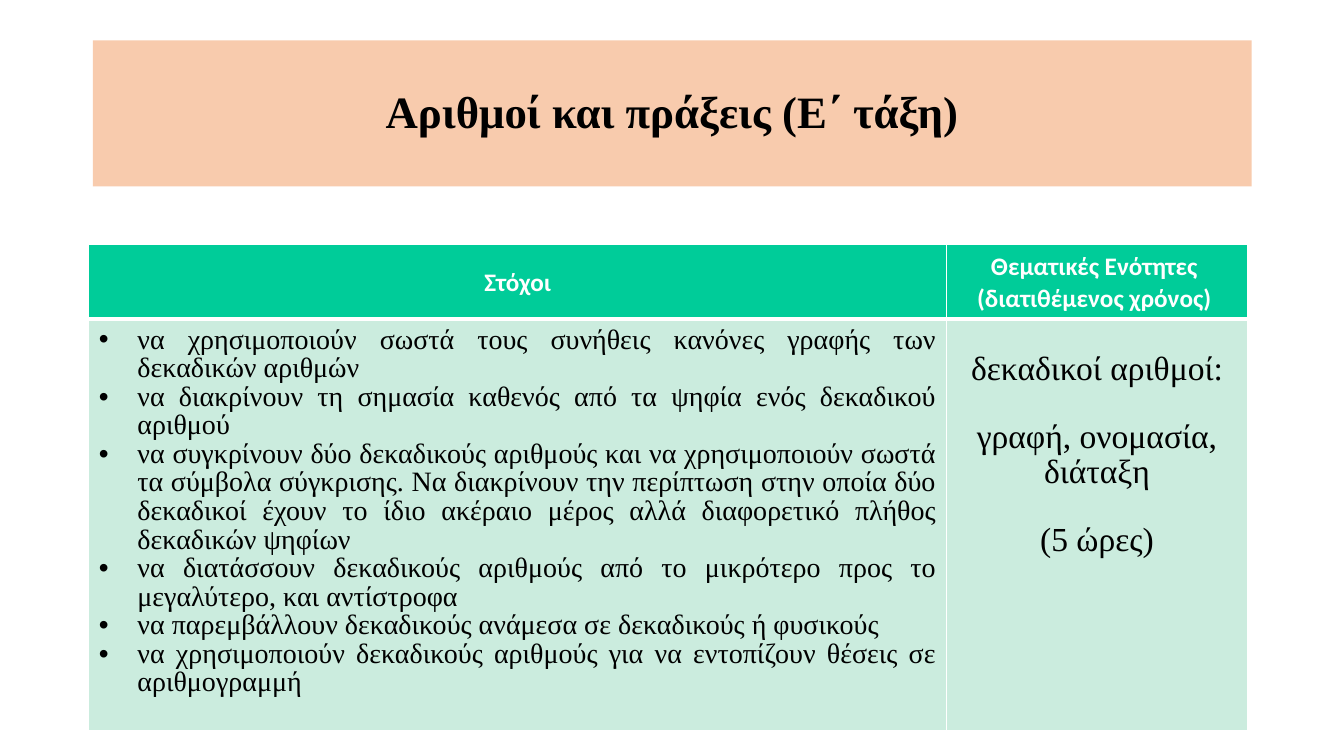
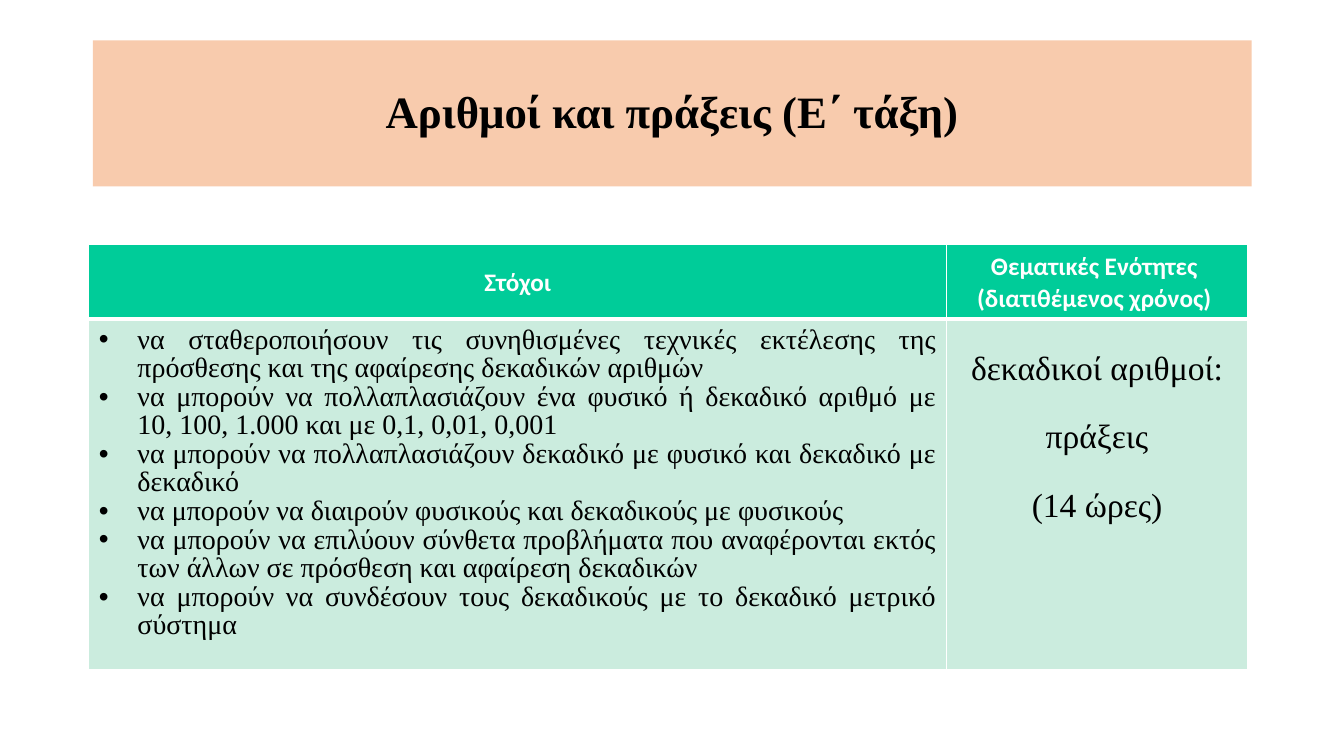
from lxml import etree
from pptx import Presentation
from pptx.dml.color import RGBColor
from pptx.enum.text import MSO_ANCHOR, MSO_AUTO_SIZE, PP_ALIGN
from pptx.oxml import ns
from pptx.util import Cm, Pt

PEACH = RGBColor(0xF8, 0xCB, 0xAD)
GREEN = RGBColor(0x00, 0xCC, 0x99)
MINT = RGBColor(0xCB, 0xEC, 0xDE)
BLACK = RGBColor(0, 0, 0)
WHITE = RGBColor(255, 255, 255)
SERIF, SANS = "Times New Roman", "Calibri"

TITLE = "Αριθμοί και πράξεις (Ε΄ τάξη)"
HEADS = [["Στόχοι"], ["Θεματικές Ενότητες ", "(διατιθέμενος χρόνος) "]]
COLS = [Cm(21.62), Cm(7.59)]
HEAD_H = Cm(1.87)
THIN, THICK = Pt(0.91), Pt(2.95)
INDENT = Cm(0.97)
GAP = Pt(24.4)

# Each unit: height of the body row, goals, groups of topic lines
UNITS = [
    (Cm(10.38), [
        "να χρησιμοποιούν σωστά τους συνήθεις κανόνες γραφής των δεκαδικών αριθμών",
        "να διακρίνουν τη σημασία καθενός από τα ψηφία ενός δεκαδικού αριθμού",
        "να συγκρίνουν δύο δεκαδικούς αριθμούς και να χρησιμοποιούν σωστά τα σύμβολα "
        "σύγκρισης. Να διακρίνουν την περίπτωση στην οποία δύο δεκαδικοί έχουν το ίδιο "
        "ακέραιο μέρος αλλά διαφορετικό πλήθος δεκαδικών ψηφίων ",
        "να διατάσσουν δεκαδικούς αριθμούς από το μικρότερο προς το μεγαλύτερο, "
        "και αντίστροφα ",
        "να παρεμβάλλουν δεκαδικούς ανάμεσα σε δεκαδικούς ή φυσικούς ",
        "να χρησιμοποιούν δεκαδικούς αριθμούς για να εντοπίζουν θέσεις σε αριθμογραμμή",
    ], [["δεκαδικοί αριθμοί:"], ["γραφή, ονομασία,", "διάταξη"], ["(5 ώρες)"]]),
    (Cm(8.82), [
        "να σταθεροποιήσουν τις συνηθισμένες τεχνικές εκτέλεσης της πρόσθεσης και της "
        "αφαίρεσης δεκαδικών αριθμών",
        "να μπορούν να πολλαπλασιάζουν ένα φυσικό ή δεκαδικό αριθμό με 10, 100, 1.000 "
        "και με 0,1, 0,01, 0,001",
        "να μπορούν να πολλαπλασιάζουν δεκαδικό με φυσικό και δεκαδικό με δεκαδικό",
        "να μπορούν να διαιρούν φυσικούς και δεκαδικούς με φυσικούς",
        "να μπορούν να επιλύουν σύνθετα προβλήματα που αναφέρονται εκτός των άλλων σε "
        "πρόσθεση και αφαίρεση δεκαδικών",
        "να μπορούν να συνδέσουν τους δεκαδικούς με το δεκαδικό μετρικό σύστημα",
    ], [["δεκαδικοί αριθμοί:"], ["πράξεις"], ["(14 ώρες)"]]),
]


def style(para, size, face, color, bold, align, spacing):
    para.alignment = align
    para.line_spacing = spacing
    for run in para.runs:
        font = run.font
        font.size, font.name, font.bold = Pt(size), face, bold
        font.color.rgb = color


def write(frame, lines, *look):
    """Fill the frame with one paragraph a line, all of one look."""
    for i, line in enumerate(lines):
        para = frame.add_paragraph() if i else frame.paragraphs[0]
        para.text = line
        style(para, *look)


def add_bullet(para):
    props = para._p.get_or_add_pPr()
    props.set("marL", str(INDENT))
    props.set("indent", str(-INDENT))
    etree.SubElement(props, ns.qn("a:buFont"), typeface="Arial")
    etree.SubElement(props, ns.qn("a:buChar"), char="•")


def paint(cell, color, top, bottom):
    """Give the cell white borders, then its fill."""
    props = cell._tc.get_or_add_tcPr()
    for side, width in zip("LRTB", (THIN, THIN, top, bottom)):
        line = etree.SubElement(props, ns.qn("a:ln" + side), w=str(width))
        fill = etree.SubElement(line, ns.qn("a:solidFill"))
        etree.SubElement(fill, ns.qn("a:srgbClr"), val=str(WHITE))
    cell.fill.solid()
    cell.fill.fore_color.rgb = color


def set_title(slide):
    title = slide.shapes.title
    title.left, title.top = Cm(2.34), Cm(1.02)
    title.width, title.height = Cm(29.21), Cm(3.68)
    title.fill.solid()
    title.fill.fore_color.rgb = PEACH
    frame = title.text_frame
    frame.auto_size = MSO_AUTO_SIZE.NONE
    frame.vertical_anchor = MSO_ANCHOR.MIDDLE
    write(frame, [TITLE], 32, SERIF, BLACK, True, PP_ALIGN.CENTER, 0.9)


def fill_goals(cell, goals):
    cell.margin_top = Cm(0.18)
    write(cell.text_frame, goals, 20, SERIF, BLACK, False, PP_ALIGN.JUSTIFY, 0.92)
    for para in cell.text_frame.paragraphs:
        add_bullet(para)


def fill_topic(cell, groups):
    """Write the topic lines, with a gap above each later group."""
    cell.margin_top = Cm(0.86)
    frame = cell.text_frame
    write(frame, sum(groups, []), 24, SERIF, BLACK, False, PP_ALIGN.CENTER, 0.92)
    start = 0
    for group in groups[:-1]:
        start += len(group)
        frame.paragraphs[start].space_before = GAP


def add_goals(slide, height, goals, groups):
    frame = slide.shapes.add_table(2, 2, Cm(2.24), Cm(6.17), sum(COLS), HEAD_H + height)
    table = frame.table
    table.horz_banding = False
    table.rows[0].height, table.rows[1].height = HEAD_H, height
    for i, (width, lines) in enumerate(zip(COLS, HEADS)):
        table.columns[i].width = width
        head = table.cell(0, i)
        head.vertical_anchor = MSO_ANCHOR.MIDDLE
        write(head.text_frame, lines, 18, SANS, WHITE, True, PP_ALIGN.CENTER, 1.04)
        paint(head, GREEN, THIN, THICK)
        paint(table.cell(1, i), MINT, THICK, THIN)
    fill_goals(table.cell(1, 0), goals)
    fill_topic(table.cell(1, 1), groups)


def main():
    deck = Presentation()
    deck.slide_width, deck.slide_height = Cm(33.88), Cm(19.05)
    for unit in UNITS:
        slide = deck.slides.add_slide(deck.slide_layouts[5])
        set_title(slide)
        add_goals(slide, *unit)
    deck.save("out.pptx")


if __name__ == "__main__":
    main()
